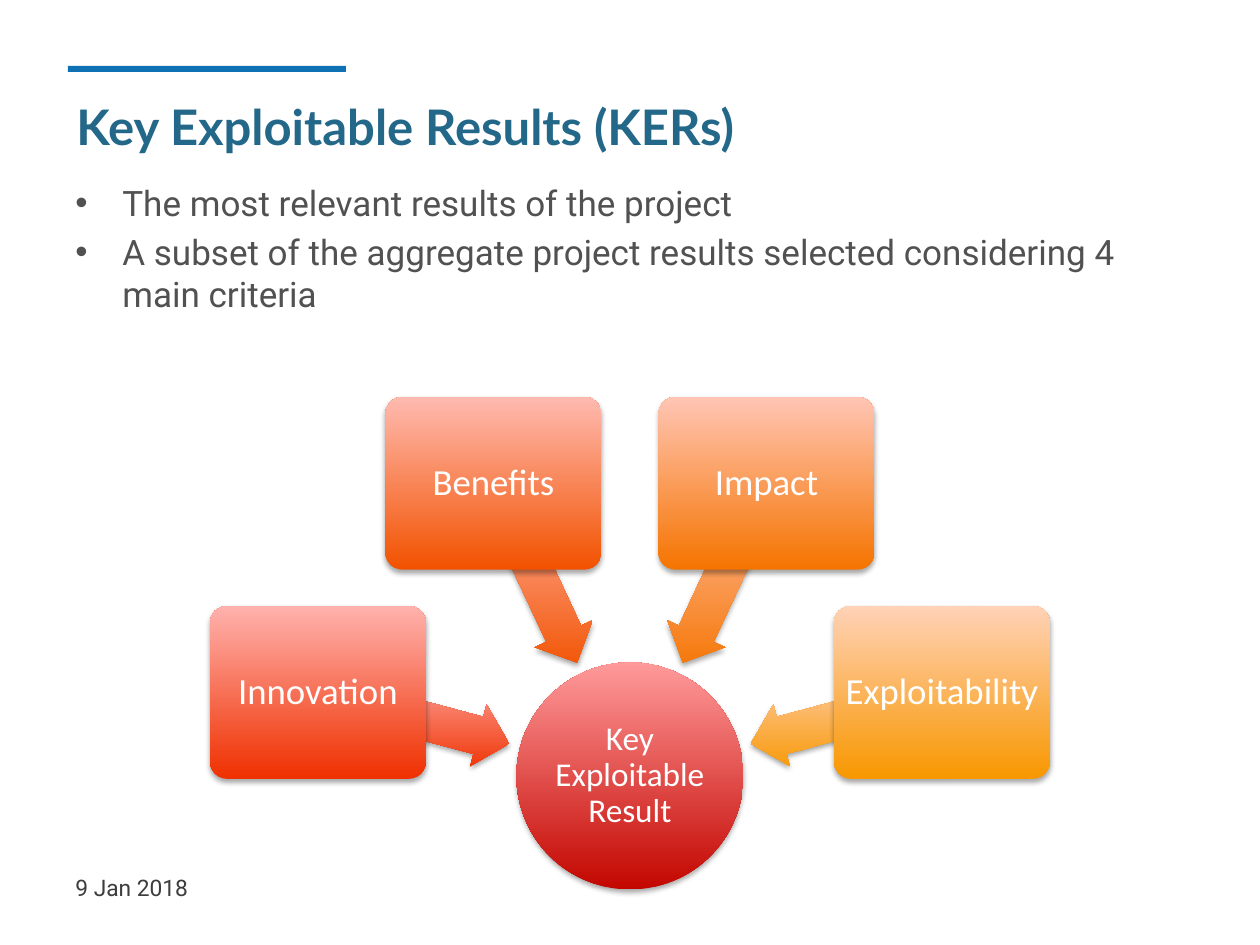
"""Build the Key Exploitable Results slide."""
from math import cos, radians, sin

from lxml.etree import SubElement
from pptx import Presentation
from pptx.dml.color import RGBColor
from pptx.enum.shapes import MSO_SHAPE
from pptx.enum.text import MSO_ANCHOR, PP_ALIGN
from pptx.oxml.ns import qn
from pptx.util import Emu, Pt

EMU_PER_PX = 914400 / 126
COLORS = {
    "bar": "0E71B4", "title": "246889", "body": "515151", "date": "3D3D3D", "white": "FFFFFF",
    "shadow": "000000",
    "result": "C30600", "result_light": "FF9A9A",
    "innovation": "EF3000", "innovation_light": "FFB2AD",
    "benefits": "F25200", "benefits_light": "FFBAB0",
    "impact": "F57400", "impact_light": "FFC5B4",
    "exploitability": "F89700", "exploitability_light": "FFD2B7",
}


def px(length):
    return Emu(round(length * EMU_PER_PX))


def rgb(name):
    return RGBColor.from_string(COLORS[name])


class SlideBuilder:
    def __init__(self, slide):
        self.slide = slide

    def style(self, paragraph, font, size, color, bold=False):
        paragraph.font.name = font
        paragraph.font.size = Pt(size)
        paragraph.font.color.rgb = rgb(color)
        paragraph.font.bold = bold

    def bar(self, left, top, width, height, color):
        shape = self.slide.shapes.add_shape(
            MSO_SHAPE.RECTANGLE, px(left), px(top), px(width), px(height))
        shape.shadow.inherit = False
        shape.fill.solid()
        shape.fill.fore_color.rgb = rgb(color)
        shape.line.fill.background()

    def text(self, box, lines, font, size, color, bold=False, bullets=False,
             anchor=MSO_ANCHOR.TOP):
        frame = self.slide.shapes.add_textbox(*map(px, box)).text_frame
        frame.word_wrap = True
        frame.vertical_anchor = anchor
        frame.text = "\n".join(lines)
        for paragraph in frame.paragraphs:
            if bullets:
                paragraph.space_before = Pt(size * 0.2)
                properties = paragraph._p.get_or_add_pPr()
                properties.set("marL", str(px(47)))
                properties.set("indent", str(px(-47)))
                SubElement(properties, qn("a:buFont")).set("typeface", "Arial")
                SubElement(properties, qn("a:buChar")).set("char", "•")
            self.style(paragraph, font, size, color, bold)

    def glossy(self, kind, center, size, color, adjustments=(), rotation=0):
        (x, y), (width, height) = center, size
        shape = self.slide.shapes.add_shape(
            kind, px(x - width / 2), px(y - height / 2), px(width), px(height))
        shape.rotation = rotation
        for index, value in enumerate(adjustments):
            shape.adjustments[index] = value
        shape.fill.gradient()
        shape.fill.gradient_angle = 90
        for stop, name in zip(shape.fill.gradient_stops, (color, f"{color}_light")):
            stop.color.rgb = rgb(name)
        properties = shape._element.spPr
        properties.find(qn("a:gradFill")).set("rotWithShape", "0")
        shape.line.fill.background()
        shape.shadow.inherit = False
        shadow = SubElement(properties.find(qn("a:effectLst")), qn("a:outerShdw"),
                            blurRad=str(Pt(3.1)), dist=str(Pt(1.8)), dir="5400000",
                            rotWithShape="0")
        tone = SubElement(shadow, qn("a:srgbClr"), val=COLORS["shadow"])
        SubElement(tone, qn("a:alpha"), val="35000")
        return shape

    def label(self, shape, text, size, inset):
        frame = shape.text_frame
        frame.word_wrap = True
        frame.vertical_anchor = MSO_ANCHOR.MIDDLE
        frame.margin_left = frame.margin_right = px(inset)
        frame.margin_top = frame.margin_bottom = px(inset)
        frame.text = text
        paragraph = frame.paragraphs[0]
        paragraph.alignment = PP_ALIGN.CENTER
        paragraph.line_spacing = 0.9
        self.style(paragraph, "Calibri", size, "white")


def main():
    presentation = Presentation()
    presentation.slide_width, presentation.slide_height = px(1260), px(945)
    builder = SlideBuilder(presentation.slides.add_slide(presentation.slide_layouts[6]))

    builder.bar(68, 66, 278, 6, "bar")
    builder.text((63, 868, 294, 50), ["9 Jan 2018"], "Roboto", 13, "date")
    builder.text((64, 86, 1012, 79), ["Key Exploitable Results (KERs)"], "Lato", 28, "title",
                 bold=True, anchor=MSO_ANCHOR.MIDDLE)
    builder.text((63, 175, 1134, 624), [
        "The most relevant results of the project",
        "A subset of the aggregate project results selected considering 4 main criteria",
    ], "Roboto", 20, "body", bullets=True)

    hub_x, hub_y = 630, 776
    hub = builder.glossy(MSO_SHAPE.OVAL, (hub_x, hub_y), (227, 227), "result")
    builder.label(hub, "Key Exploitable Result", 19, 1)

    for index, criterion in enumerate(("Innovation", "Benefits", "Impact", "Exploitability")):
        angle = 195 + 50 * index
        arrow_center, box_center = (
            (hub_x + radius * cos(radians(angle)), hub_y + radius * sin(radians(angle)))
            for radius in (224, 323))
        color = criterion.lower()
        builder.glossy(MSO_SHAPE.LEFT_ARROW, arrow_center, (198, 64), color, (0.6, 0.5), angle)
        box = builder.glossy(MSO_SHAPE.ROUNDED_RECTANGLE, box_center, (216, 173), color, (0.1,))
        builder.label(box, criterion, 21, 5)

    presentation.save("out.pptx")


if __name__ == "__main__":
    main()
